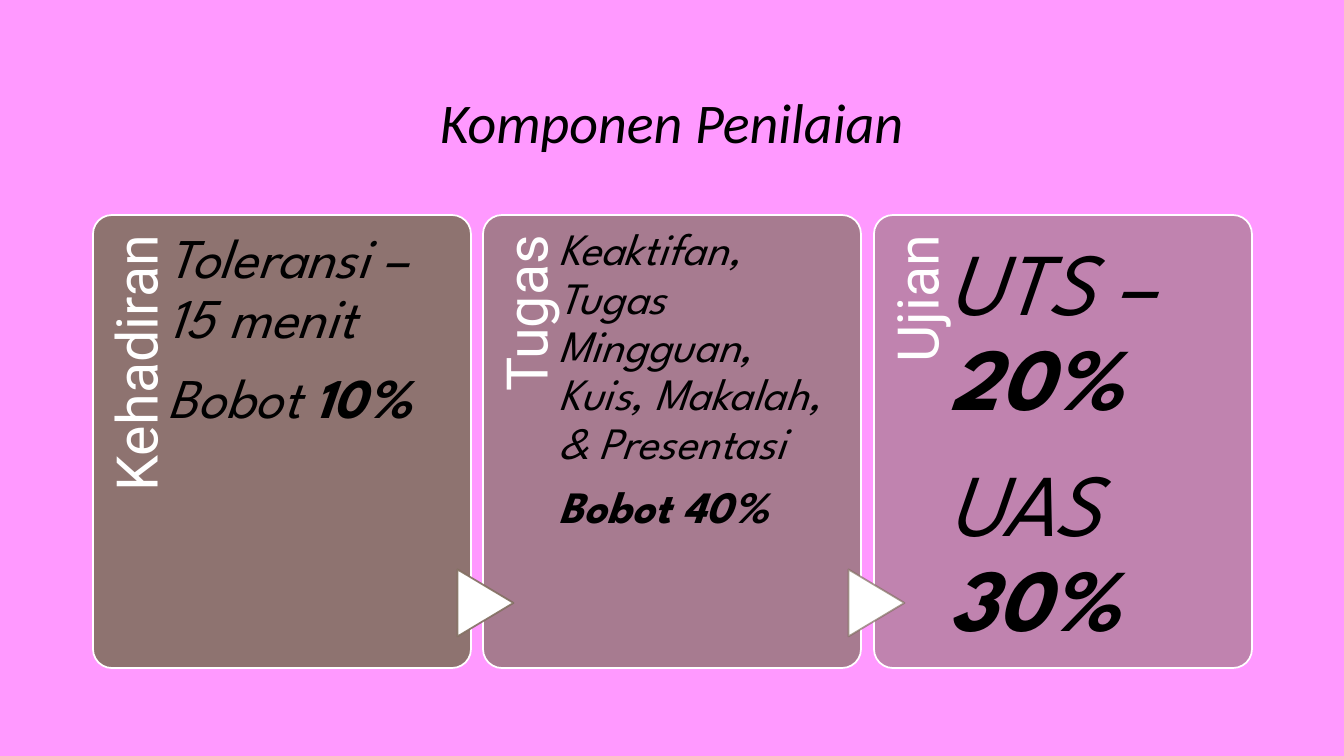
from lxml.etree import SubElement
from pptx import Presentation
from pptx.dml.color import RGBColor
from pptx.enum.shapes import MSO_SHAPE as Preset
from pptx.enum.text import MSO_ANCHOR as Anchor, PP_ALIGN as Align
from pptx.oxml import parse_xml
from pptx.oxml.ns import nsdecls, qn
from pptx.util import Emu, Pt

PINK, BROWN, WHITE, BLACK = "FF99FF", "826F61", "FFFFFF", "000000"
CARD_TOP, CARD_WIDTH, CARD_HEIGHT = 215, 378, 453

TITLE_FORMAT = {"name": "Calibri", "size": Pt(40), "italic": True, "bold": False}
LABEL_FORMAT = {"name": "Roboto", "size": Pt(41)}
DETAIL_FORMAT = {"name": "League Spartan", "italic": True}

COMPONENTS = [
    ("Kehadiran", 90, 40, 15,
     [[("Toleransi – 15 menit", False)], [("Bobot ", False), ("10%", True)]]),
    ("Tugas", 70, 32, 12,
     [[("Keaktifan, Tugas Mingguan, Kuis, Makalah, & Presentasi", False)],
      [("Bobot 40%", True)]]),
    ("Ujian", 50, 63, 24,
     [[("UTS – ", False), ("20%", True)], [("UAS ", False), ("30%", True)]]),
]


def px(length):
    """Turn pixels into EMU."""
    return Emu(round(length * 914400 / 100.8))


def color(hex_code):
    """Turn a hex string into a colour."""
    return RGBColor.from_string(hex_code)


def apply_format(target, values):
    """Set each attribute named in the dict."""
    for name, value in values.items():
        setattr(target, name, value)


def set_opacity(shape, part, percent):
    """Make the fill or line colour found at part translucent."""
    tint = shape.element.xpath(f"./p:spPr/{part}/a:srgbClr")[0]
    SubElement(tint, qn("a:alpha"), val=str(percent * 1000))


def add_run(paragraph, words, values, hex_code):
    """Append one formatted run and return it."""
    run = paragraph.add_run()
    run.text = words
    apply_format(run.font, values)
    run.font.color.rgb = color(hex_code)
    return run


def add_title(slide, words):
    """Place the title with its faint outline and shadow."""
    title = slide.shapes.title
    apply_format(title, {"left": px(101), "top": px(68),
                         "width": px(1141), "height": px(107)})
    title.text_frame.vertical_anchor = Anchor.MIDDLE
    paragraph = title.text_frame.paragraphs[0]
    paragraph.alignment = Align.CENTER
    run = add_run(paragraph, words, TITLE_FORMAT, BLACK)
    properties = run.font.fill and run._r.get_or_add_rPr()
    properties.insert(0, parse_xml(
        f'<a:ln {nsdecls("a")} w="9525"><a:solidFill><a:srgbClr val="404040">'
        '<a:alpha val="10000"/></a:srgbClr></a:solidFill></a:ln>'))
    properties.find(qn("a:solidFill")).addnext(parse_xml(
        f'<a:effectLst {nsdecls("a")}><a:outerShdw blurRad="38100" dist="25400" '
        'dir="2700000"><a:srgbClr val="000000"><a:alpha val="50000"/>'
        '</a:srgbClr></a:outerShdw></a:effectLst>'))


def add_preset(slide, preset, box, fill, line):
    """Draw a flat preset shape."""
    shape = slide.shapes.add_shape(preset, *map(px, box))
    shape.shadow.inherit = False
    shape.fill.solid()
    shape.fill.fore_color.rgb = color(fill)
    shape.line.color.rgb = color(line)
    shape.line.width = Pt(1.25)
    return shape


def add_text(slide, box, paragraphs, values, hex_code, inset_top, inset_right=0,
             align=Align.LEFT):
    """Write paragraphs of (words, bold) runs in a text box."""
    holder = slide.shapes.add_textbox(*map(px, box))
    frame = holder.text_frame
    apply_format(frame, {"word_wrap": True, "margin_left": 0, "margin_bottom": 0,
                         "margin_top": px(inset_top),
                         "margin_right": px(inset_right)})
    for index, runs in enumerate(paragraphs):
        paragraph = frame.add_paragraph() if index else frame.paragraphs[0]
        apply_format(paragraph, {"alignment": align, "line_spacing": 0.9})
        spacing = SubElement(paragraph._p.get_or_add_pPr(), qn("a:spcAft"))
        SubElement(spacing, qn("a:spcPct"), val="35000")
        for words, bold in runs:
            add_run(paragraph, words, {**values, "bold": bold}, hex_code)
    return holder


def add_arrow(slide, card_left, opacity):
    """Point from the previous card into this one."""
    arrow = add_preset(slide, Preset.FLOWCHART_EXTRACT,
                       (card_left - 31, 575, 67, 56), WHITE, BROWN)
    arrow.rotation = 90
    set_opacity(arrow, "a:ln/a:solidFill", opacity)


def add_component(slide, index, label, opacity, size, inset_top, details):
    """Build one card with its upright label and details."""
    left = 93 + index * 781 // 2
    card = add_preset(slide, Preset.ROUNDED_RECTANGLE,
                      (left, CARD_TOP, CARD_WIDTH, CARD_HEIGHT), BROWN, WHITE)
    card.adjustments[0] = 0.05
    set_opacity(card, "a:solidFill", opacity)
    heading = add_text(slide, (left - 148, 363, 372, 76), [[(label, False)]],
                       LABEL_FORMAT, WHITE, 15, 20, Align.RIGHT)
    heading.rotation = 270
    if index:
        add_arrow(slide, left, opacity + 20)
    add_text(slide, (left + 75, CARD_TOP, 281, CARD_HEIGHT), details,
             {**DETAIL_FORMAT, "size": Pt(size)}, BLACK, inset_top)


def main():
    """Build and save the slide."""
    deck = Presentation()
    apply_format(deck, {"slide_width": px(1344), "slide_height": px(756)})
    slide = deck.slides.add_slide(deck.slide_layouts[5])
    slide.background.fill.solid()
    slide.background.fill.fore_color.rgb = color(PINK)
    add_title(slide, "Komponen Penilaian")
    for index, component in enumerate(COMPONENTS):
        add_component(slide, index, *component)
    deck.save("out.pptx")


if __name__ == "__main__":
    main()
